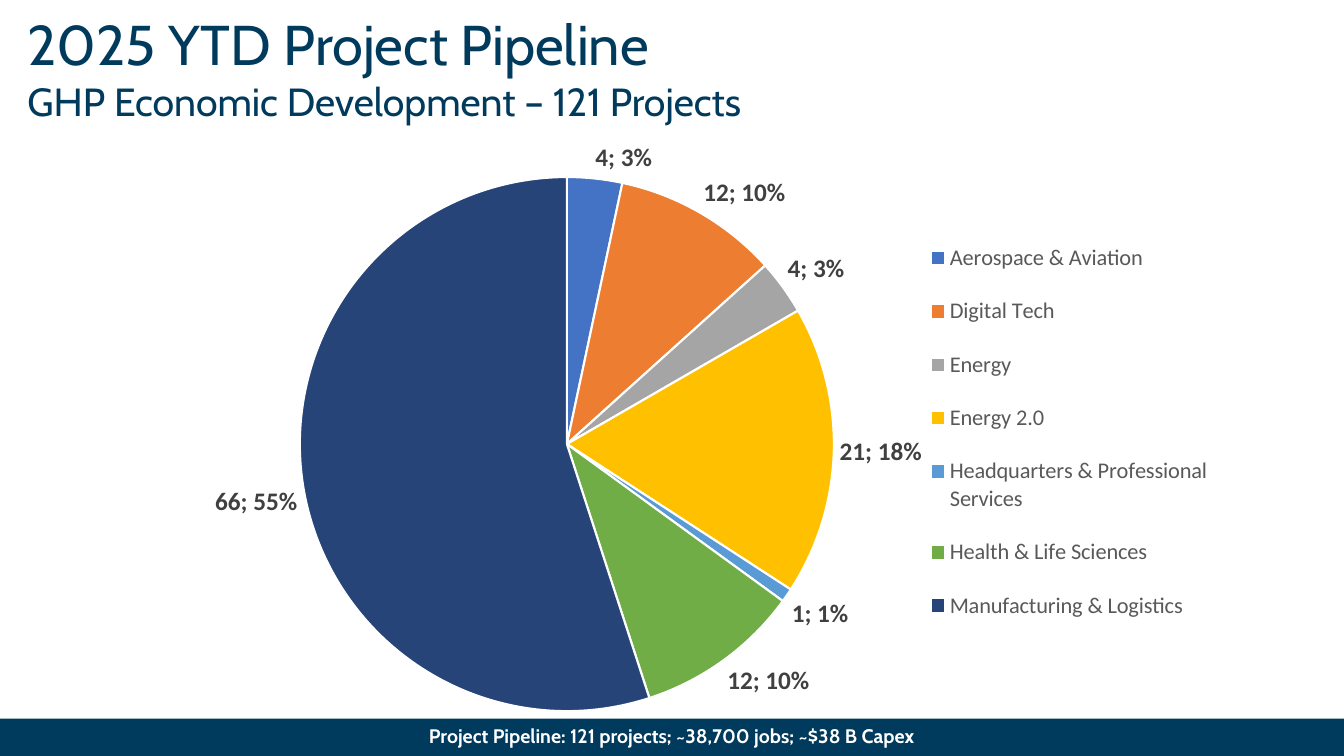
from lxml.etree import SubElement
from pptx import Presentation
from pptx.chart.data import CategoryChartData
from pptx.dml.color import RGBColor
from pptx.enum.chart import XL_CHART_TYPE, XL_LABEL_POSITION, XL_LEGEND_POSITION
from pptx.enum.shapes import MSO_SHAPE
from pptx.enum.text import MSO_ANCHOR, PP_ALIGN
from pptx.oxml.ns import qn
from pptx.util import Cm, Pt

COLORS = {"navy": "003A5C", "white": "FFFFFF", "black": "000000", "label": "404040", "legend": "595959"}

SECTORS = [
    ("Aerospace & Aviation", 4, "4472C4"),
    ("Digital Tech", 12, "ED7D31"),
    ("Energy", 4, "A5A5A5"),
    ("Energy 2.0", 21, "FFC000"),
    ("Headquarters & Professional Services", 1, "5B9BD5"),
    ("Health & Life Sciences", 12, "70AD47"),
    ("Manufacturing & Logistics", 66, "264478"),
]


def assign(target, values):
    for name, value in values.items():
        setattr(target, name, value)


def color(name):
    return RGBColor.from_string(COLORS.get(name, name))


class Deck:
    head = "Cabin"
    body = "Calibri"

    def __init__(self):
        self.file = Presentation()
        assign(self.file, {"slide_width": Cm(33.87), "slide_height": Cm(19.05)})
        self.slide = self.file.slides.add_slide(self.file.slide_layouts[6])

    def font(self, font, face, size, tint, bold=False):
        assign(font, {"name": face, "size": Pt(size), "bold": bold})
        font.color.rgb = color(tint)

    def frame(self, shape, top, anchor):
        frame = shape.text_frame
        assign(frame, {
            "word_wrap": True, "vertical_anchor": anchor, "margin_left": 0,
            "margin_right": 0, "margin_top": Cm(top), "margin_bottom": 0,
        })
        return frame.paragraphs[0]

    def run(self, para, text, size, tint, bold=False):
        run = para.add_run()
        run.text = text
        self.font(run.font, self.head, size, tint, bold)

    def title(self, box, lines):
        shape = self.slide.shapes.add_textbox(*map(Cm, box))
        para = self.frame(shape, 0.03, MSO_ANCHOR.MIDDLE)
        for index, (text, size) in enumerate(lines):
            if index:
                para.add_line_break()
            self.run(para, text, size, "navy")

    def banner(self, box, text):
        shape = self.slide.shapes.add_shape(MSO_SHAPE.RECTANGLE, *map(Cm, box))
        shape.shadow.inherit = False
        shape.fill.solid()
        shape.fill.fore_color.rgb = color("navy")
        shape.line.fill.background()
        para = self.frame(shape, 0.13, MSO_ANCHOR.TOP)
        para.alignment = PP_ALIGN.CENTER
        self.run(para, text, 14, "white", True)

    def layout(self, parent, box, inner=False):
        node = parent.find(qn("c:layout"))
        if node is None:
            node = SubElement(parent, qn("c:layout"))
            parent.remove(node)
            parent.insert(1 if parent.tag == qn("c:legend") else 0, node)
        manual = SubElement(node, qn("c:manualLayout"))
        values = {"layoutTarget": "inner"} if inner else {}
        values.update(xMode="edge", yMode="edge")
        values.update(zip("xywh", map(str, box)))
        for tag, value in values.items():
            SubElement(manual, qn("c:" + tag)).set("val", value)

    def pie(self, box, sectors):
        names, counts, tints = zip(*sectors)
        data = CategoryChartData()
        data.categories = names
        data.add_series("Series 1", counts)
        chart = self.slide.shapes.add_chart(XL_CHART_TYPE.PIE, *map(Cm, box), data).chart
        assign(chart, {"has_title": False, "has_legend": True})
        self.font(chart.font, self.body, 10, "black")
        assign(chart.legend, {"position": XL_LEGEND_POSITION.RIGHT, "include_in_layout": False})
        self.font(chart.legend.font, self.body, 16, "legend")

        plot = chart.plots[0]
        plot.vary_by_categories = True
        series = plot.series[0]
        for index, tint in enumerate(tints):
            style = series.points[index].format
            style.fill.solid()
            style.fill.fore_color.rgb = color(tint)
            style.line.color.rgb = color("white")
            style.line.width = Pt(1.5)

        labels = series.data_labels
        assign(labels, {
            "show_value": True, "show_percentage": True,
            "position": XL_LABEL_POSITION.OUTSIDE_END,
        })
        self.font(labels.font, self.body, 18, "label", True)
        root = chart.element
        for last in root.iter(qn("c:showBubbleSize")):
            mark = SubElement(last.getparent(), qn("c:separator"))
            mark.text = "; "
            last.addnext(mark)

        area = root.find(".//" + qn("c:plotArea"))
        self.layout(area, (0.12, 0.08, 0.51, 0.88), True)
        self.layout(root.find(".//" + qn("c:legend")), (0.72, 0.15, 0.27, 0.7))


def main():
    deck = Deck()
    deck.pie((4.39, 3.2, 26.39, 15.37), SECTORS)
    deck.title((0.69, 0.2, 32.3, 2.95), [
        ("2025 YTD Project Pipeline", 40),
        ("GHP Economic Development – 121 Projects", 28),
    ])
    deck.banner((0, 18.11, 33.87, 0.94), "Project Pipeline: 121 projects; ~38,700 jobs; ~$38 B Capex")
    deck.file.save("out.pptx")


if __name__ == "__main__":
    main()
